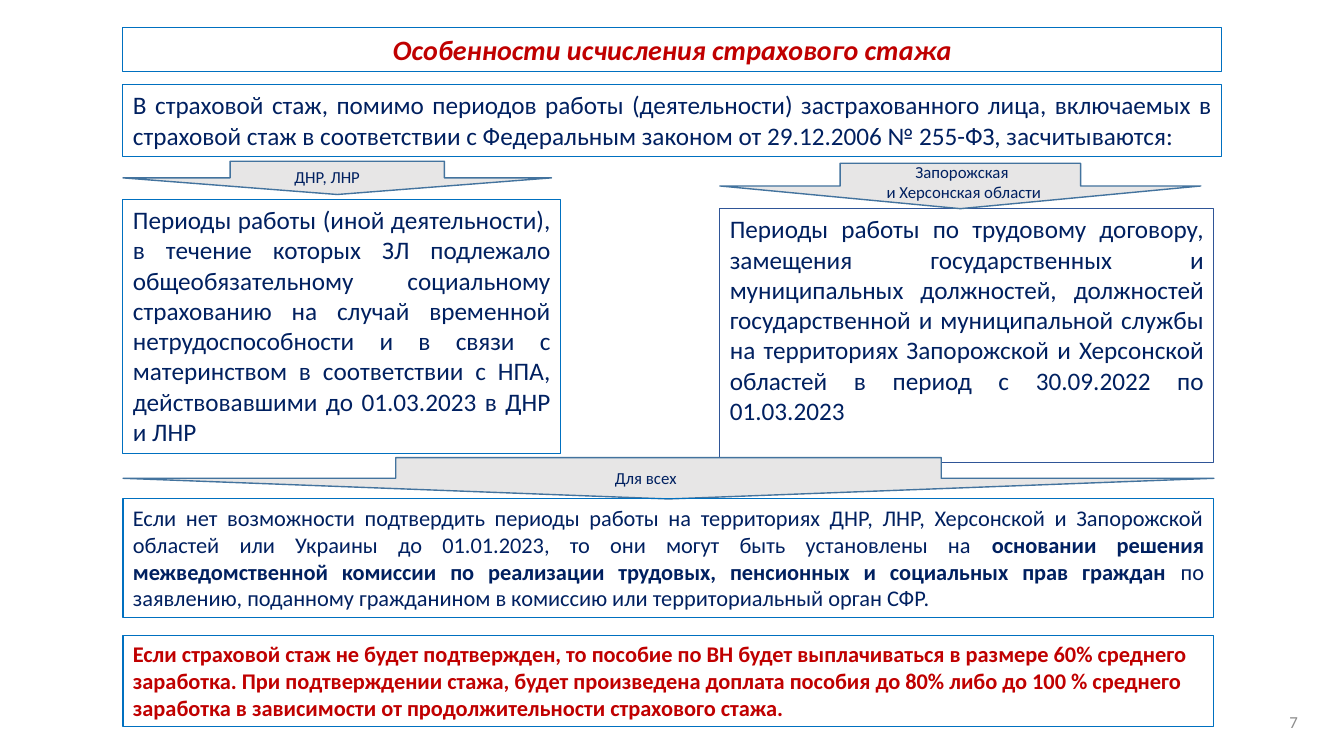
from pptx import Presentation
from pptx.dml.color import RGBColor
from pptx.enum.shapes import MSO_SHAPE
from pptx.enum.text import MSO_ANCHOR, PP_ALIGN
from pptx.util import Inches, Pt

RECT, DOWN_ARROW = MSO_SHAPE.RECTANGLE, MSO_SHAPE.DOWN_ARROW
TOP, MIDDLE = MSO_ANCHOR.TOP, MSO_ANCHOR.MIDDLE
LEFT, CENTER, RIGHT, JUSTIFY = PP_ALIGN.LEFT, PP_ALIGN.CENTER, PP_ALIGN.RIGHT, PP_ALIGN.JUSTIFY

COLORS = {
    "navy": "002060",
    "red": "C00000",
    "gray": "8C8C8C",
    "frame": "0070C0",
    "dark_frame": "2F5597",
    "arrow": "E7E6E6",
    "arrow_line": "43739E",
}
FONT = "Calibri"
MARGIN = 1.22
RIGHT_COLUMN = 7.14
HEADER_WIDTH = 10.9
BODY_WIDTH = 10.82


def rgb(name):
    return RGBColor.from_string(COLORS[name])


def write(tf, paragraphs, size=18, color="navy", bold=False, italic=False,
          align=JUSTIFY, anchor=TOP):
    """Fill a frame; each paragraph is a list of runs, every second one bold."""
    tf.word_wrap = True
    tf.vertical_anchor = anchor
    for i, runs in enumerate(paragraphs):
        p = tf.add_paragraph() if i else tf.paragraphs[0]
        p.alignment = align
        for j, text in enumerate(runs):
            r = p.add_run()
            r.text = text
            r.font.name = FONT
            r.font.size = Pt(size)
            r.font.bold = bold or j % 2 == 1
            r.font.italic = italic
            r.font.color.rgb = rgb(color)


def add_outline(slide, kind, box, line, width, fill=None):
    sp = slide.shapes.add_shape(kind, *map(Inches, box))
    sp.shadow.inherit = False
    sp.line.color.rgb = rgb(line)
    sp.line.width = Pt(width)
    if fill:
        sp.fill.solid()
        sp.fill.fore_color.rgb = rgb(fill)
    else:
        sp.fill.background()
    return sp


def add_panel(slide, box, *runs, line="frame", **text_format):
    sp = add_outline(slide, RECT, box, line, 0.75)
    write(sp.text_frame, [runs], **text_format)


def add_label(slide, box, *lines, **text_format):
    tb = slide.shapes.add_textbox(*map(Inches, box))
    write(tb.text_frame, [[line] for line in lines], size=12, anchor=MIDDLE, **text_format)


def add_arrow(slide, box, label_box, *lines):
    """Wide down arrow with its caption; label_box is relative to the arrow corner."""
    add_outline(slide, DOWN_ARROW, box, "arrow_line", 1, fill="arrow")
    dx, dy, width, height = label_box
    add_label(slide, (box[0] + dx, box[1] + dy, width, height), *lines, align=CENTER)


def add_header(slide, left, top, width):
    add_panel(slide, (left, top, width, 0.44), "Особенности исчисления страхового стажа",
              size=20, color="red", bold=True, italic=True, align=CENTER)
    add_panel(slide, (left, top + 0.57, width, 0.71),
              "В страховой стаж, помимо периодов работы (деятельности) застрахованного лица, "
              "включаемых в страховой стаж в соответствии с Федеральным законом "
              "от 29.12.2006 № 255-ФЗ, засчитываются:")


def add_donbas_column(slide, left, top):
    add_panel(slide, (left, top + 0.38, 4.34, 2.52),
              "Периоды работы (иной деятельности), в течение которых ЗЛ подлежало "
              "общеобязательному социальному страхованию на случай временной "
              "нетрудоспособности и в связи с материнством в соответствии с НПА, "
              "действовавшими до 01.03.2023 в ДНР и ЛНР")
    add_arrow(slide, (left, top, 4.25, 0.33), (1.29, 0, 1.47, 0.3), "ДНР, ЛНР")


def add_south_column(slide, left, top):
    add_panel(slide, (left, top + 0.45, 4.9, 2.52),
              "Периоды работы по трудовому договору, замещения государственных и "
              "муниципальных должностей, должностей государственной и муниципальной "
              "службы на территориях Запорожской и Херсонской областей в период "
              "с 30.09.2022 по 01.03.2023", line="dark_frame")
    add_arrow(slide, (left, top, 4.77, 0.45), (1.01, -0.08, 2.82, 0.53),
              "Запорожская ", "и Херсонская области")


def add_common_rules(slide, left, top, width):
    add_arrow(slide, (left, top, width, 0.41), (4.45, 0.05, 1.47, 0.3), "Для всех")
    add_panel(slide, (left, top + 0.41, width, 1.18),
              "Если нет возможности подтвердить периоды работы на территориях ДНР, ЛНР, "
              "Херсонской и Запорожской областей или Украины до 01.01.2023, "
              "то они могут быть установлены на ",
              "основании решения межведомственной комиссии по реализации трудовых, "
              "пенсионных и социальных прав граждан ",
              "по заявлению, поданному гражданином в комиссию или территориальный орган СФР.",
              size=16)
    add_panel(slide, (left, top + 1.76, width, 0.91),
              "Если страховой стаж не будет подтвержден, то пособие по ВН будет "
              "выплачиваться в размере 60% среднего заработка. При подтверждении стажа, "
              "будет произведена доплата пособия до 80% либо до 100 % среднего заработка "
              "в зависимости от продолжительности страхового стажа.",
              size=16, color="red", bold=True, align=LEFT)


def main():
    prs = Presentation()
    prs.slide_width, prs.slide_height = Inches(13.33), Inches(7.5)
    slide = prs.slides.add_slide(prs.slide_layouts[6])
    add_header(slide, MARGIN, 0.27, HEADER_WIDTH)
    add_donbas_column(slide, MARGIN, 1.6)
    add_south_column(slide, RIGHT_COLUMN, 1.62)
    add_common_rules(slide, MARGIN, 4.54, BODY_WIDTH)
    add_label(slide, (9.97, 6.96, 3, 0.4), "7", color="gray", align=RIGHT)
    prs.save("out.pptx")


if __name__ == "__main__":
    main()
